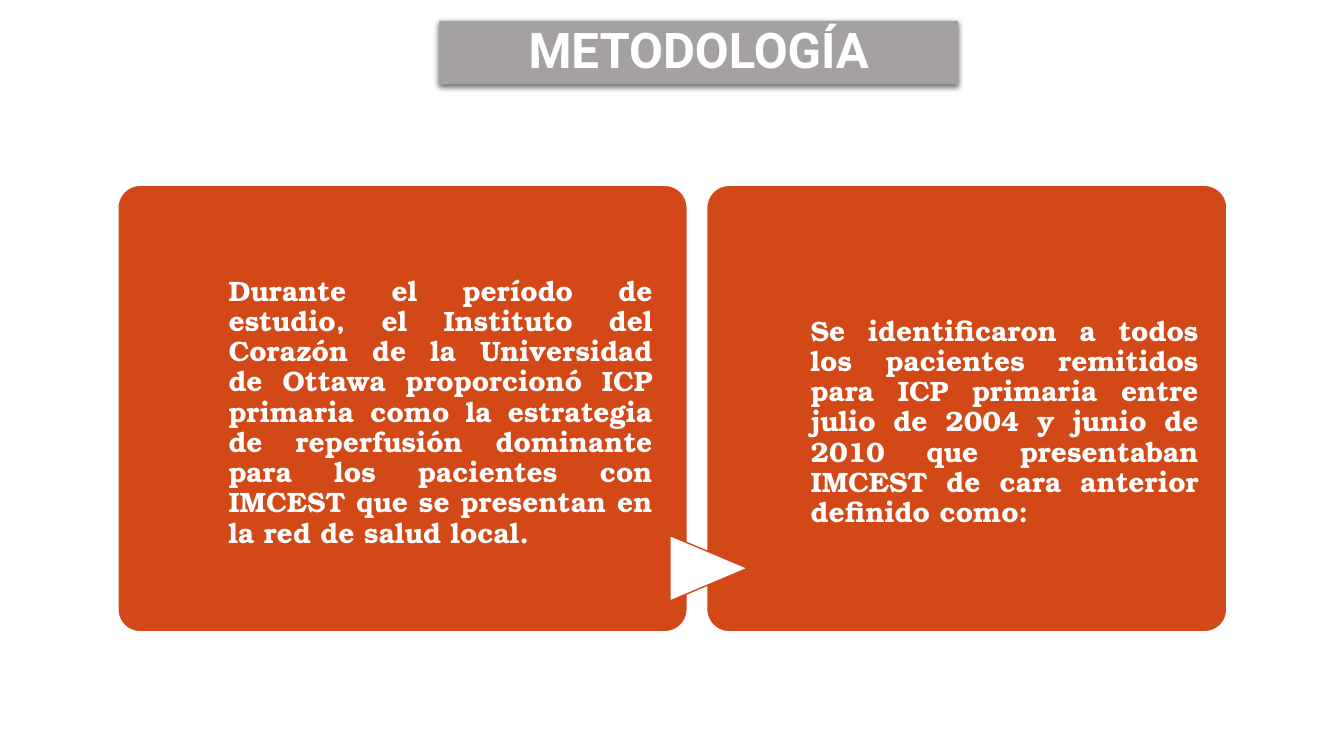
"""Build the METODOLOGÍA slide: two linked text cards under a title bar."""
from lxml import etree
from pptx import Presentation
from pptx.dml.color import RGBColor
from pptx.enum.shapes import MSO_SHAPE as Shape
from pptx.enum.text import MSO_ANCHOR as Anchor, PP_ALIGN as Align
from pptx.oxml.ns import qn
from pptx.util import Cm, Pt

TITLE = "METODOLOGÍA"
CARDS = [
    {"text": "Durante el período de estudio, el Instituto del Corazón de la "
             "Universidad de Ottawa proporcionó ICP primaria como la estrategia "
             "de reperfusión dominante para los pacientes con IMCEST que se "
             "presentan en la red de salud local.",
     "width": 14.35, "indent": 2.79, "text_width": 10.69, "text_drop": 2.31},
    {"text": "Se identificaron a todos los pacientes remitidos para ICP primaria "
             "entre julio de 2004 y junio de 2010 que presentaban IMCEST de cara "
             "anterior definido como:",
     "width": 13.11, "indent": 2.62, "text_width": 9.78, "text_drop": 3.32},
]

WHITE = RGBColor(0xFF, 0xFF, 0xFF)
ORANGE = RGBColor(0xD3, 0x48, 0x17)
GRAY = RGBColor(0xA6, 0xA1, 0xA1)

CARD_LEFT, CARD_TOP, CARD_HEIGHT, CARD_GAP = 2.97, 4.67, 11.25, 0.49


def add_shape(kind, left, top, width, height, fill, line=None):
    shape = slide.shapes.add_shape(kind, Cm(left), Cm(top), Cm(width), Cm(height))
    shape.shadow.inherit = False
    shape.fill.solid()
    shape.fill.fore_color.rgb = fill
    if line is None:
        shape.line.fill.background()
    else:
        shape.line.color.rgb = line
        shape.line.width = Pt(1)
    return shape


def write(frame, text, font_name, size, align):
    frame.word_wrap = True
    paragraph = frame.paragraphs[0]
    paragraph.text = text
    paragraph.alignment = align
    paragraph.line_spacing = 0.9
    font = paragraph.font
    font.name, font.size, font.bold = font_name, Pt(size), True
    font.color.rgb = WHITE


def add_shadow(shape):
    effects = shape._element.spPr.find(qn("a:effectLst"))
    shadow = etree.SubElement(effects, qn("a:outerShdw"), blurRad=str(Pt(4)),
                              dist=str(Pt(1.5)), dir="5400000", rotWithShape="0")
    color = etree.SubElement(shadow, qn("a:srgbClr"), val="000000")
    etree.SubElement(color, qn("a:alpha"), val="60000")


presentation = Presentation()
presentation.slide_width, presentation.slide_height = Cm(33.87), Cm(19.05)
slide = presentation.slides.add_slide(presentation.slide_layouts[6])

left = CARD_LEFT
for card in CARDS:
    shape = add_shape(Shape.ROUNDED_RECTANGLE, left, CARD_TOP,
                      card["width"], CARD_HEIGHT, ORANGE, WHITE)
    shape.adjustments[0] = 0.05
    box = slide.shapes.add_textbox(Cm(left + card["indent"]), Cm(CARD_TOP),
                                   Cm(card["text_width"]), Cm(CARD_HEIGHT))
    frame = box.text_frame
    frame.margin_left = frame.margin_right = frame.margin_bottom = 0
    frame.margin_top = Cm(card["text_drop"])
    write(frame, card["text"], "TeX Gyre Bonum", 20, Align.JUSTIFY)
    left += card["width"] + CARD_GAP

arrow = add_shape(Shape.FLOWCHART_EXTRACT, 17.04, 13.34, 1.65, 1.96, WHITE, ORANGE)
arrow.rotation = 90

title = add_shape(Shape.RECTANGLE, 11.07, 0.53, 13.08, 1.6, GRAY)
add_shadow(title)
title.text_frame.vertical_anchor = Anchor.MIDDLE
write(title.text_frame, TITLE, "Roboto", 35.1, Align.CENTER)

presentation.save("out.pptx")
